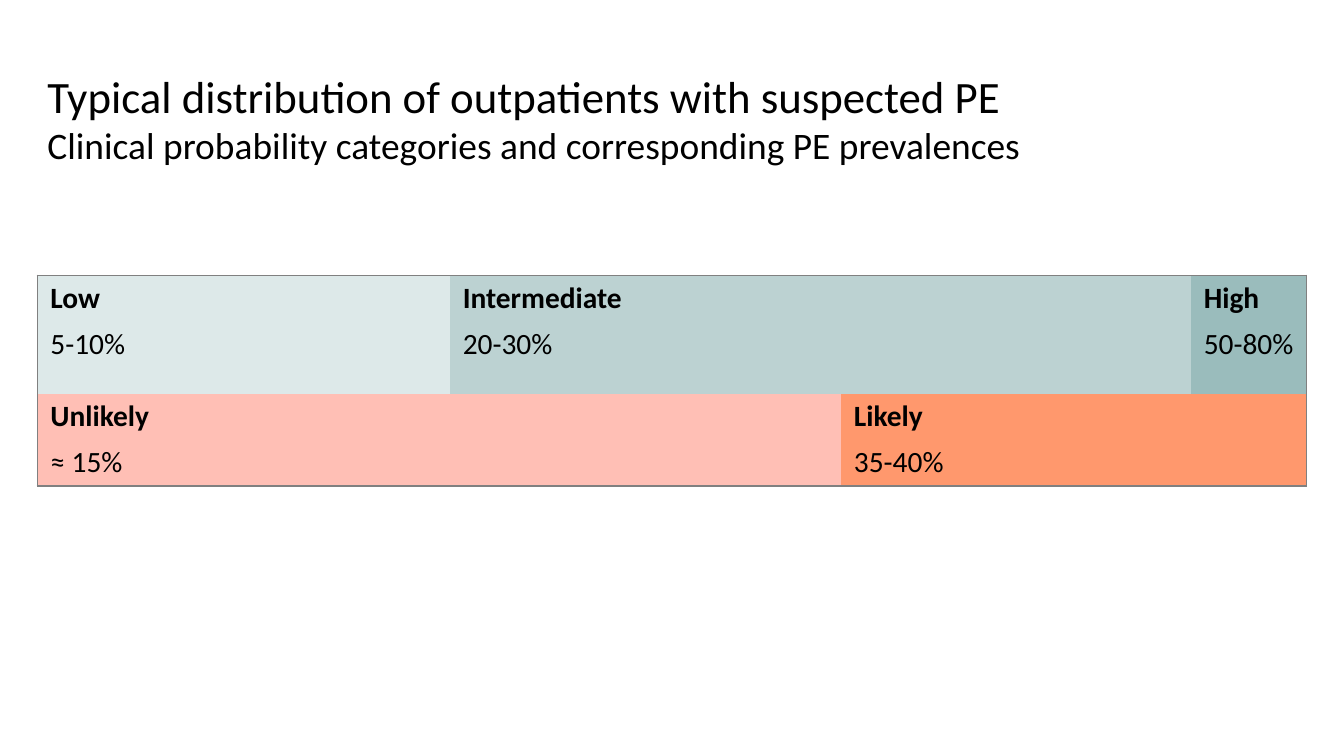
"""Build the slide on clinical probability categories of pulmonary embolism."""
from lxml.etree import SubElement
from pptx import Presentation
from pptx.dml.color import RGBColor
from pptx.enum.text import MSO_ANCHOR, MSO_AUTO_SIZE, PP_ALIGN
from pptx.oxml.ns import qn
from pptx.util import Inches, Pt

WIDTH, HEIGHT = Inches(13.33), Inches(7.5)
LEFT = Inches(0.37)
BLACK = RGBColor(0, 0, 0)
GREY = RGBColor(0x80, 0x80, 0x80)
PALE_TEAL = RGBColor(0xDD, 0xE9, 0xE9)
LIGHT_TEAL = RGBColor(0xBC, 0xD2, 0xD2)
TEAL = RGBColor(0x9A, 0xBC, 0xBC)
PINK = RGBColor(0xFF, 0xBF, 0xB5)
ORANGE = RGBColor(0xFF, 0x98, 0x6D)

TITLE_LINES = [
    ("Typical distribution of outpatients with suspected PE", 32),
    ("Clinical probability categories and corresponding PE prevalences", 26.7),
]
COLUMN_WIDTHS = [4.09, 3.88, 3.47, 1.15]
ROW_HEIGHTS = [0.43, 0.72, 0.43, 0.43]
SCORES = [
    [("Low", "5-10%", 0, 1, PALE_TEAL),
     ("Intermediate", "20-30%", 1, 2, LIGHT_TEAL),
     ("High", "50-80%", 3, 1, TEAL)],
    [("Unlikely", "≈ 15%", 0, 2, PINK),
     ("Likely", "35-40%", 2, 2, ORANGE)],
]


def apply_format(target, values):
    """Set each named attribute of the target."""
    for name, value in values.items():
        setattr(target, name, value)


def format_run(run, size, bold=False):
    """Give a run the slide's font."""
    apply_format(run.font, {"name": "Calibri", "size": Pt(size), "bold": bold})
    run.font.color.rgb = BLACK


def add_title(slide):
    """Place the two-line title in its placeholder."""
    title = slide.shapes.title
    apply_format(title, {"left": LEFT, "top": Inches(0.53),
                         "width": Inches(11.97), "height": Inches(1.18)})
    apply_format(title.text_frame, {"vertical_anchor": MSO_ANCHOR.BOTTOM,
                                    "auto_size": MSO_AUTO_SIZE.NONE,
                                    "word_wrap": True})
    paragraph = title.text_frame.paragraphs[0]
    paragraph.alignment = PP_ALIGN.LEFT
    for index, (text, size) in enumerate(TITLE_LINES):
        if index:
            paragraph.add_line_break()
        run = paragraph.add_run()
        run.text = text
        format_run(run, size)


def set_borders(cell, outer_edges):
    """Draw the outer edges of a cell and hide the inner ones."""
    properties = cell._tc.get_or_add_tcPr()
    for side, is_outer in outer_edges.items():
        line = SubElement(properties, qn(f"a:ln{side}"), w=str(Pt(1)))
        if is_outer:
            fill = SubElement(line, qn("a:solidFill"))
            SubElement(fill, qn("a:srgbClr"), val=str(GREY))
        else:
            SubElement(line, qn("a:noFill"))


def fill_cell(table, row, column, span, text, color, bold):
    """Merge, frame, colour and label one cell."""
    cell = table.cell(row, column)
    end = column + span
    if span > 1:
        cell.merge(table.cell(row, end - 1))
    for index in range(column, end):
        part = table.cell(row, index)
        set_borders(part, {"L": index == 0, "R": end == len(COLUMN_WIDTHS),
                           "T": row == 0, "B": row == len(ROW_HEIGHTS) - 1})
        part.fill.solid()
        part.fill.fore_color.rgb = color
    apply_format(cell, {"margin_left": Inches(0.13), "margin_right": Inches(0.13),
                        "margin_top": Inches(0.05), "margin_bottom": Inches(0.05)})
    run = cell.text_frame.paragraphs[0].add_run()
    run.text = text
    format_run(run, 21, bold)


def add_probability_table(slide):
    """Add the table with a label row and a prevalence row per score."""
    frame = slide.shapes.add_table(
        len(ROW_HEIGHTS), len(COLUMN_WIDTHS), LEFT, Inches(2.73),
        Inches(sum(COLUMN_WIDTHS)), Inches(sum(ROW_HEIGHTS)))
    table = frame.table
    apply_format(table, {"first_row": False, "horz_banding": False})
    for column, width in zip(table.columns, COLUMN_WIDTHS):
        column.width = Inches(width)
    for row, height in zip(table.rows, ROW_HEIGHTS):
        row.height = Inches(height)
    for index, categories in enumerate(SCORES):
        for label, prevalence, column, span, color in categories:
            fill_cell(table, 2 * index, column, span, label, color, True)
            fill_cell(table, 2 * index + 1, column, span, prevalence, color, False)


def main():
    """Build and save the presentation."""
    presentation = Presentation()
    apply_format(presentation, {"slide_width": WIDTH, "slide_height": HEIGHT})
    slide = presentation.slides.add_slide(presentation.slide_layouts[5])
    add_title(slide)
    add_probability_table(slide)
    presentation.save("out.pptx")


if __name__ == "__main__":
    main()
